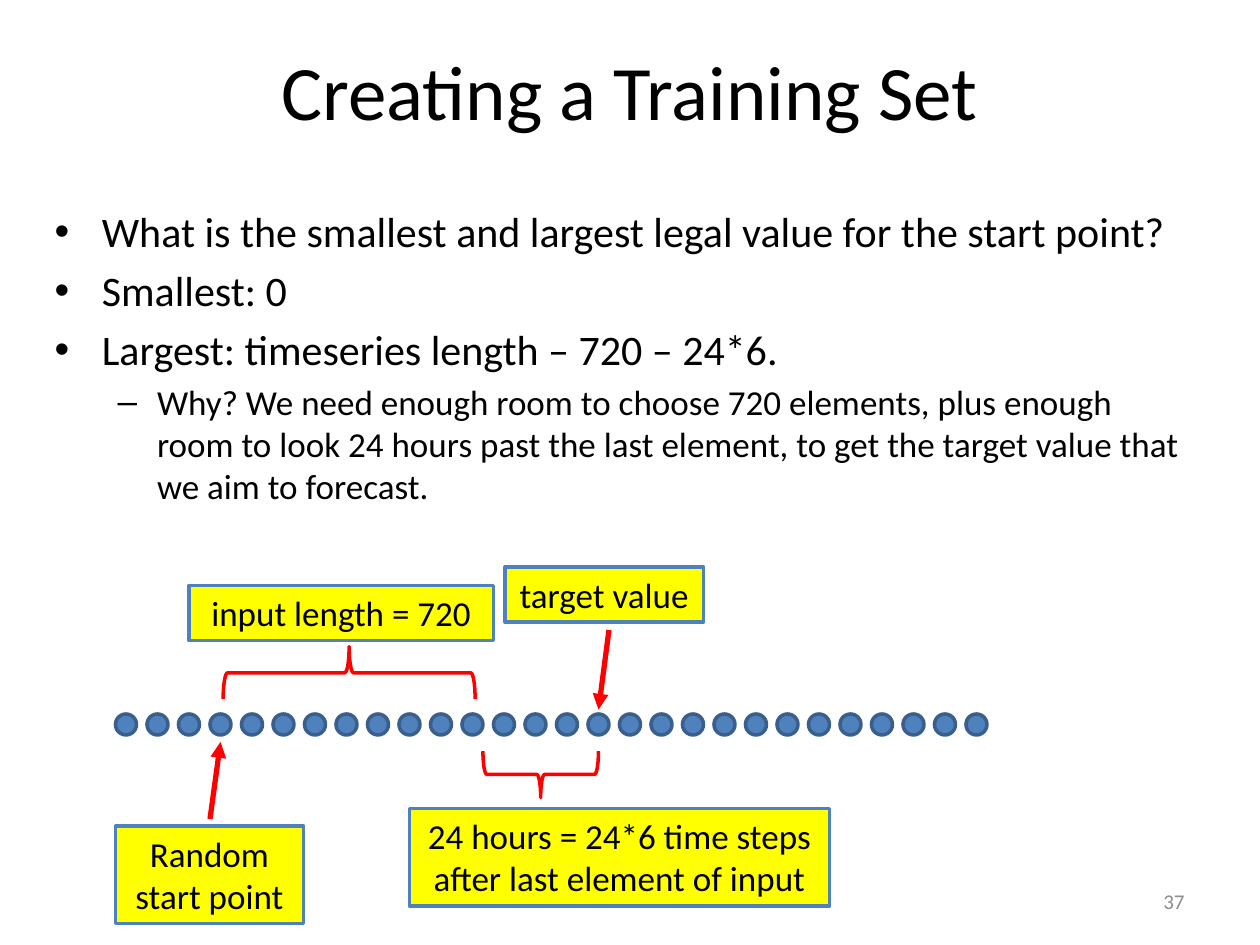
from lxml import etree
from pptx import Presentation
from pptx import util as u
from pptx.dml import color
from pptx.enum import shapes, text
from pptx.oxml import ns

Pt = u.Pt
KIND = shapes.MSO_SHAPE
ALIGN = text.PP_ALIGN

THEME = {
    "font": "Calibri", "ink": "000000", "gray": "8C8C8C",
    "dot": "4F81BD", "rim": "3A5F8C", "note": "FFFF00", "mark": "FF0000",
    "title": 44, "list": 24, "sub": 20, "label": 20, "num": 12,
    "thin": 2, "thick": 3,
}

TITLE = ("Creating a Training Set", (36, 12, 648, 78))
BODY = (24, 114, 660, 384)
POINTS = [
    (0, "What is the smallest and largest legal value for the start point?"),
    (0, "Smallest: 0"),
    (0, "Largest: timeseries length – 720 – 24*6."),
    (1, "Why? We need enough room to choose 720 elements, plus enough room to "
        "look 24 hours past the last element, to get the target value that "
        "we aim to forecast."),
]
NUMBER = ("37", (516, 500.5, 168, 28.75))
SERIES = {"count": 28, "left": 66, "top": 408, "size": 12, "step": 18}
LABELS = [
    ("Random start point", (66, 472, 107.5, 55.75)),
    ("input length = 720", (108, 334.5, 174, 31.5)),
    ("24 hours = 24*6 time steps after last element of input",
     (234, 462, 240, 55.75)),
    ("target value", (288.5, 324, 113.5, 31.5)),
]
BRACES = [
    (90, (184.5, 312.5, 30, 144)),
    (270, (295.75, 409.5, 26.5, 66)),
]
ARROWS = [((120, 468), (126, 424)), ((348, 360), (342, 405.5))]


def rgb(name):
    return color.RGBColor.from_string(THEME[name])


def put(obj, **vals):
    for key, val in vals.items():
        setattr(obj, key, val)


def place(shape, box):
    put(shape, **dict(zip(("left", "top", "width", "height"), map(Pt, box))))


def write(para, words, size, ink="ink", align=None):
    run = para.add_run()
    put(run, text=words)
    put(run.font, name=THEME["font"], size=Pt(THEME[size]))
    run.font.color.rgb = rgb(ink)
    if align is not None:
        put(para, alignment=align)


def stroke(shape, ink, size):
    shape.line.color.rgb = rgb(ink)
    shape.line.width = Pt(THEME[size])


def draw(slide, kind, box, fill, ink):
    shape = slide.shapes.add_shape(kind, *map(Pt, box))
    shape.shadow.inherit = False
    if fill:
        shape.fill.solid()
        shape.fill.fore_color.rgb = rgb(fill)
    else:
        shape.fill.background()
    stroke(shape, ink, "thin")
    return shape


def arrow(slide, start, end):
    link = slide.shapes.add_connector(
        shapes.MSO_CONNECTOR.STRAIGHT, *map(Pt, start + end))
    stroke(link, "mark", "thick")
    etree.SubElement(link.line._get_or_add_ln(), ns.qn("a:tailEnd"),
                     type="triangle")
    etree.SubElement(link._element.spPr, ns.qn("a:effectLst"))


def words(slide):
    title, body = slide.placeholders
    place(title, TITLE[1])
    put(title.text_frame, vertical_anchor=text.MSO_ANCHOR.MIDDLE,
        auto_size=text.MSO_AUTO_SIZE.NONE)
    write(title.text_frame.paragraphs[0], TITLE[0], "title",
          align=ALIGN.CENTER)

    place(body, BODY)
    frame = body.text_frame
    put(frame, auto_size=text.MSO_AUTO_SIZE.NONE)
    for i, (level, line) in enumerate(POINTS):
        para = frame.add_paragraph() if i else frame.paragraphs[0]
        put(para, level=level)
        write(para, line, "sub" if level else "list")

    frame = slide.shapes.add_textbox(*map(Pt, NUMBER[1])).text_frame
    put(frame, word_wrap=True, vertical_anchor=text.MSO_ANCHOR.MIDDLE)
    write(frame.paragraphs[0], NUMBER[0], "num", "gray", ALIGN.RIGHT)


def diagram(slide):
    size = SERIES["size"]
    for i in range(SERIES["count"]):
        left = SERIES["left"] + i * SERIES["step"]
        draw(slide, KIND.OVAL, (left, SERIES["top"], size, size),
             "dot", "rim")
    for turn, box in BRACES:
        put(draw(slide, KIND.LEFT_BRACE, box, None, "mark"), rotation=turn)
    for line, box in LABELS:
        frame = draw(slide, KIND.RECTANGLE, box, "note", "dot").text_frame
        put(frame, word_wrap=True, vertical_anchor=text.MSO_ANCHOR.TOP,
            auto_size=text.MSO_AUTO_SIZE.SHAPE_TO_FIT_TEXT)
        write(frame.paragraphs[0], line, "label", align=ALIGN.CENTER)
    for start, end in ARROWS:
        arrow(slide, start, end)


def main():
    deck = Presentation()
    put(deck, slide_width=Pt(720), slide_height=Pt(540))
    slide = deck.slides.add_slide(deck.slide_layouts[1])
    words(slide)
    diagram(slide)
    deck.save("out.pptx")


if __name__ == "__main__":
    main()
